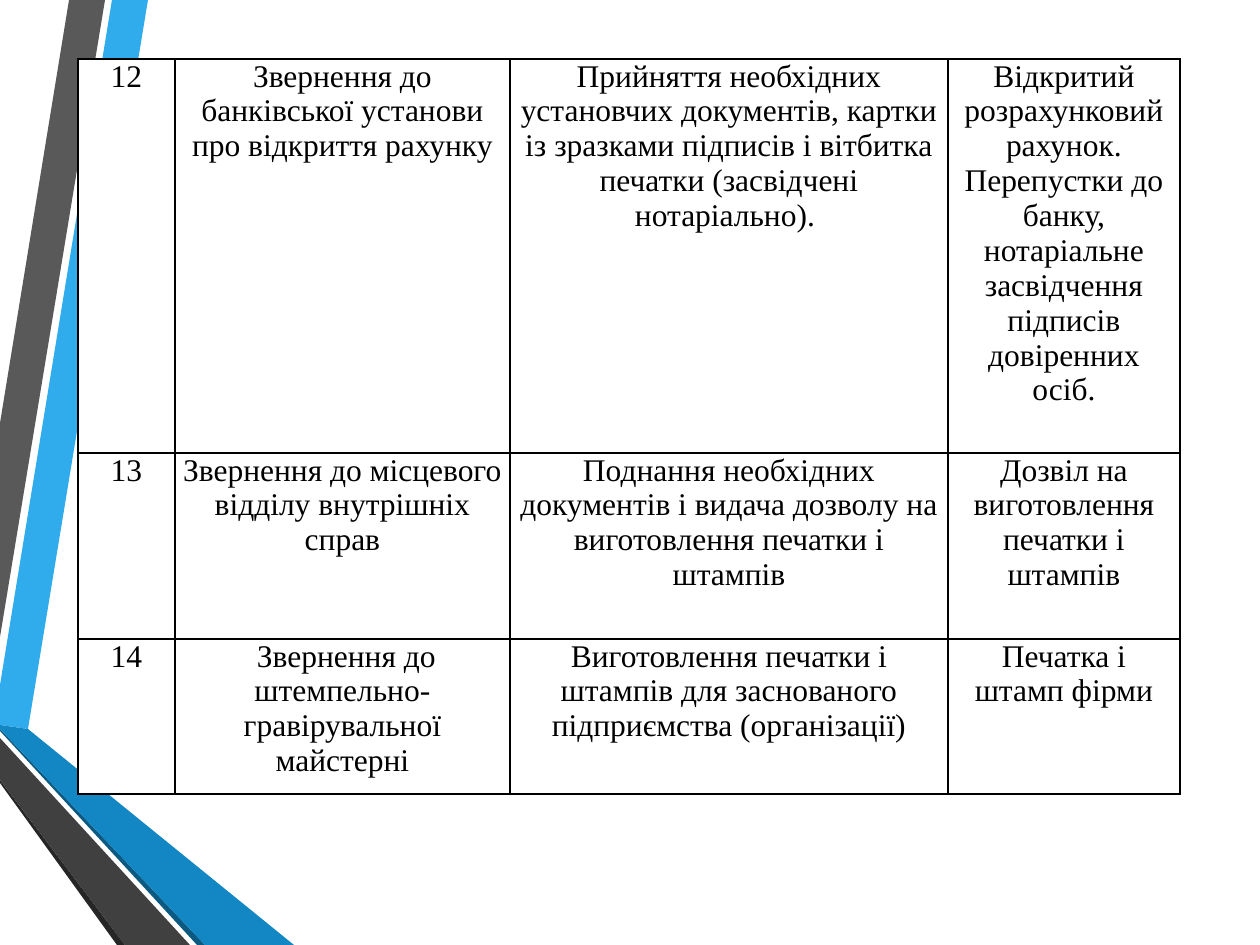
import pptx
import pptx.util
import pptx.dml.color
import pptx.enum.text
import pptx.oxml.ns
import lxml.etree

PX = 914400 / 126
FONT = "Times New Roman"
COLORS = {
    "sky": "30ACEC", "gray": "595959", "shadow": "262626", "navy": "0C5A82",
    "blue": "1287C3", "charcoal": "404040", "paper": "FFFFFF", "ink": "000000",
}

RIBBONS = [
    ("sky", [(0, 685), (0, 725), (28, 729), (148, 0), (112, 0)]),
    ("gray", [(105, 0), (69, 0), (0, 423), (0, 637)]),
    ("shadow", [(0, 780), (0, 783), (117, 945), (125, 945)]),
    ("navy", [(0, 729), (0, 731), (197, 945), (205, 945)]),
    ("blue", [(0, 729), (205, 945), (294, 945), (28, 729), (0, 725)]),
    ("charcoal", [(0, 780), (125, 945), (190, 945), (0, 738)]),
]

STEPS = [
    ("12",
     "Звернення до банківської установи про відкриття рахунку",
     "Прийняття необхідних установчих документів, картки із зразками підписів "
     "і вітбитка печатки (засвідчені нотаріально). ",
     "Відкритий розрахунковий рахунок. Перепустки до банку, нотаріальне "
     "засвідчення підписів довіренних осіб."),
    ("13",
     "Звернення до місцевого відділу внутрішніх справ",
     "Поднання необхідних документів і видача дозволу на виготовлення печатки і штампів",
     "Дозвіл на виготовлення печатки і штампів"),
    ("14",
     " Звернення до штемпельно-гравірувальної майстерні",
     "Виготовлення печатки і штампів для заснованого підприємства (організації)",
     "Печатка і штамп фірми"),
]
TABLE_LEFT, TABLE_TOP = 78, 59
COLUMN_WIDTHS = [97, 335, 438, 232]
ROW_HEIGHTS = [394, 186, 155]
CELL_MARGIN = 7


def px(length):
    return pptx.util.Emu(round(length * PX))


def color(name):
    return pptx.dml.color.RGBColor.from_string(COLORS[name])


def draw_ribbon(slide, fill, points):
    builder = slide.shapes.build_freeform(*points[0], scale=PX)
    builder.add_line_segments(points[1:], close=True)
    ribbon = builder.convert_to_shape()
    ribbon.shadow.inherit = False
    ribbon.fill.solid()
    ribbon.fill.fore_color.rgb = color(fill)
    ribbon.line.fill.background()


def add_borders(cell):
    qn = pptx.oxml.ns.qn
    properties = cell._tc.get_or_add_tcPr()
    for side in ("lnL", "lnR", "lnT", "lnB"):
        border = lxml.etree.SubElement(properties, qn(f"a:{side}"), w=str(pptx.util.Pt(1)))
        fill = lxml.etree.SubElement(border, qn("a:solidFill"))
        lxml.etree.SubElement(fill, qn("a:srgbClr"), val=COLORS["ink"])


def fill_cell(cell, text):
    cell.margin_left = cell.margin_right = px(CELL_MARGIN)
    cell.margin_top = cell.margin_bottom = 0
    add_borders(cell)
    cell.fill.solid()
    cell.fill.fore_color.rgb = color("paper")
    paragraph = cell.text_frame.paragraphs[0]
    paragraph.alignment = pptx.enum.text.PP_ALIGN.CENTER
    run = paragraph.add_run()
    run.text = text
    run.font.name = FONT
    run.font.size = pptx.util.Pt(18)
    run.font.color.rgb = color("ink")


def draw_steps(slide):
    table = slide.shapes.add_table(
        len(STEPS), len(COLUMN_WIDTHS), px(TABLE_LEFT), px(TABLE_TOP),
        px(sum(COLUMN_WIDTHS)), px(sum(ROW_HEIGHTS))).table
    table.first_row = table.horz_banding = False
    for column, width in zip(table.columns, COLUMN_WIDTHS):
        column.width = px(width)
    for row, height, step in zip(table.rows, ROW_HEIGHTS, STEPS):
        row.height = px(height)
        for cell, text in zip(row.cells, step):
            fill_cell(cell, text)


def main():
    deck = pptx.Presentation()
    deck.slide_width, deck.slide_height = px(1260), px(945)
    slide = deck.slides.add_slide(deck.slide_layouts[6])
    for fill, points in RIBBONS:
        draw_ribbon(slide, fill, points)
    draw_steps(slide)
    deck.save("out.pptx")


if __name__ == "__main__":
    main()
